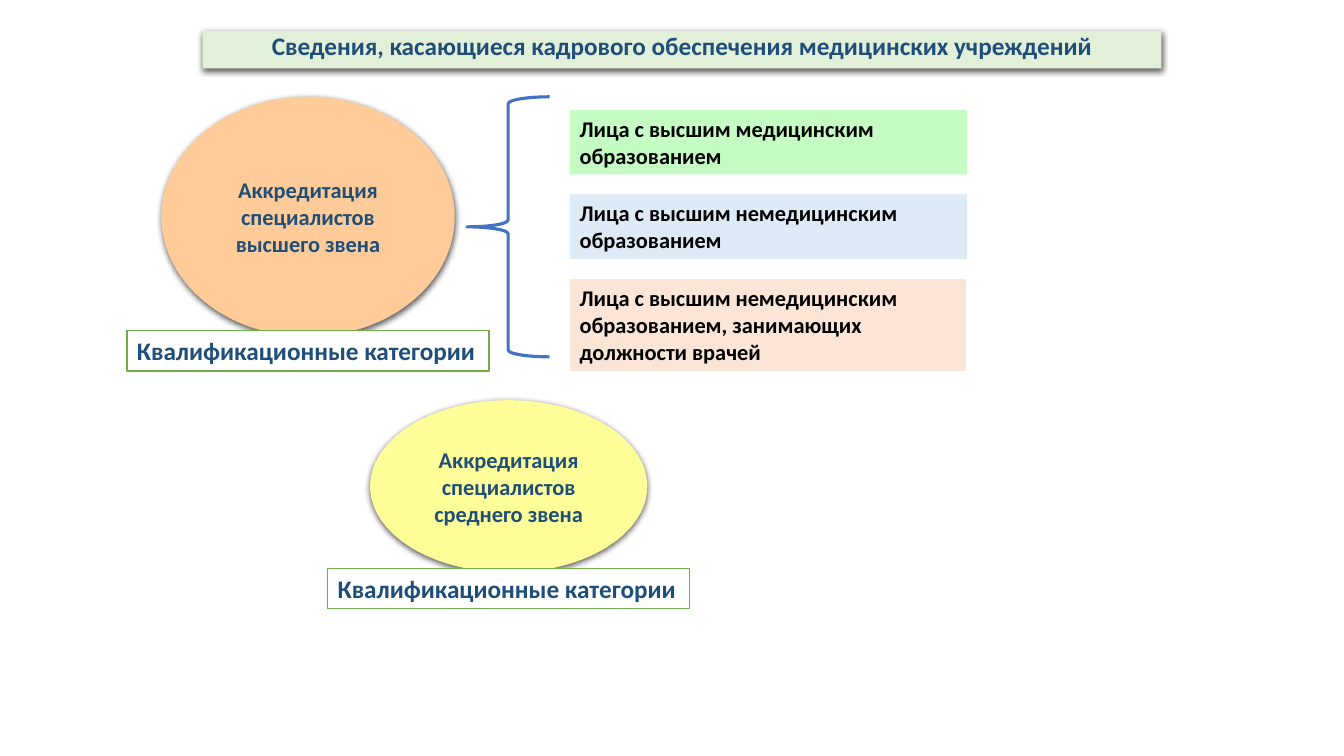
import pptx
import pptx.util
import pptx.dml.color
import pptx.enum.shapes
import pptx.enum.text
import pptx.oxml
import pptx.oxml.ns

Inches = pptx.util.Inches
SHAPE = pptx.enum.shapes.MSO_SHAPE
ALIGN = pptx.enum.text.PP_ALIGN
ANCHOR = pptx.enum.text.MSO_ANCHOR

# Content
TITLE = "Сведения, касающиеся кадрового обеспечения медицинских учреждений"
CATEGORIES = "Квалификационные категории"
LEVELS = [  # text, fill, ellipse box, left and top of the categories label
    ("Аккредитация специалистов высшего звена", "FFCC99", (1.6, 0.96, 2.91, 2.38), (1.26, 3.28)),
    ("Аккредитация специалистов среднего звена", "FFFF99", (3.67, 3.97, 2.75, 1.71), (3.25, 5.64)),
]
GROUPS = [  # text, fill, width, height
    ("Лица с высшим медицинским образованием", "C4FCC4", 3.94, 0.64),
    ("Лица с высшим немедицинским образованием", "DEEBF7", 3.94, 0.64),
    ("Лица с высшим немедицинским образованием, занимающих должности врачей",
     "FBE5D6", 3.93, 0.91),
]

THEME = {
    "font": "Calibri", "body": 16, "heading": 18,
    "navy": "1F4E79", "black": "000000", "white": "FFFFFF",
    "title_fill": "E2F0D9", "brace": "4472C4", "label_line": "70AD47",
}
TITLE_BOX = (2.01, 0.31, 9.51, 0.37)
BRACE_BOX = (4.63, 0.96, 0.82, 2.58)
LABEL_SIZE = (3.59, 0.4)
GROUP_LEFT, GROUP_TOP, GROUP_GAP = 5.65, 1.09, 0.2


def rgb(value):
    return pptx.dml.color.RGBColor.from_string(value)


def add_shape(kind, box, fill=None, line=None, width=1, shadow=False):
    s = slide.shapes.add_shape(kind, *[Inches(v) for v in box])
    s.shadow.inherit = False
    if fill:
        s.fill.solid()
        s.fill.fore_color.rgb = rgb(fill)
    else:
        s.fill.background()
    if line:
        s.line.color.rgb = rgb(line)
        s.line.width = pptx.util.Pt(width)
    else:
        s.line.fill.background()
    if shadow:
        effects = s._element.spPr.find(pptx.oxml.ns.qn("a:effectLst"))
        effects.append(pptx.oxml.parse_xml(
            f'<a:outerShdw {pptx.oxml.ns.nsdecls("a")} blurRad="57150" dist="19050" '
            'dir="5400000" algn="ctr" rotWithShape="0">'
            '<a:srgbClr val="000000"><a:alpha val="63000"/></a:srgbClr></a:outerShdw>'))
    return s


def set_text(s, text, size=THEME["body"], color=THEME["navy"], align=ALIGN.LEFT,
             anchor=ANCHOR.TOP, wrap=True, spacing=None):
    tf = s.text_frame
    tf.word_wrap = wrap
    tf.vertical_anchor = anchor
    p = tf.paragraphs[0]
    p.alignment = align
    p.line_spacing = spacing
    r = p.add_run()
    r.text = text
    r.font.name = THEME["font"]
    r.font.size = pptx.util.Pt(size)
    r.font.bold = True
    r.font.color.rgb = rgb(color)


prs = pptx.Presentation()
prs.slide_width, prs.slide_height = Inches(13.33), Inches(7.5)
slide = prs.slides.add_slide(prs.slide_layouts[6])

# Title bar
s = add_shape(SHAPE.RECTANGLE, TITLE_BOX, THEME["title_fill"], shadow=True)
set_text(s, TITLE, size=THEME["heading"], align=ALIGN.CENTER, spacing=0.8)

# Accreditation levels, each with its categories label
for text, fill, box, corner in LEVELS:
    s = add_shape(SHAPE.OVAL, box, fill, shadow=True)
    set_text(s, text, align=ALIGN.CENTER, anchor=ANCHOR.MIDDLE)
    s = add_shape(SHAPE.RECTANGLE, corner + LABEL_SIZE, THEME["white"], THEME["label_line"])
    set_text(s, CATEGORIES, size=THEME["heading"], wrap=False)

# Brace opening towards the groups
s = add_shape(SHAPE.RIGHT_BRACE, BRACE_BOX, line=THEME["brace"], width=2.25)
s.rotation = 180

# Groups of higher-level staff
top = GROUP_TOP
for text, fill, width, height in GROUPS:
    s = add_shape(SHAPE.RECTANGLE, (GROUP_LEFT, top, width, height), fill)
    set_text(s, text, color=THEME["black"])
    top += height + GROUP_GAP

prs.save("out.pptx")
